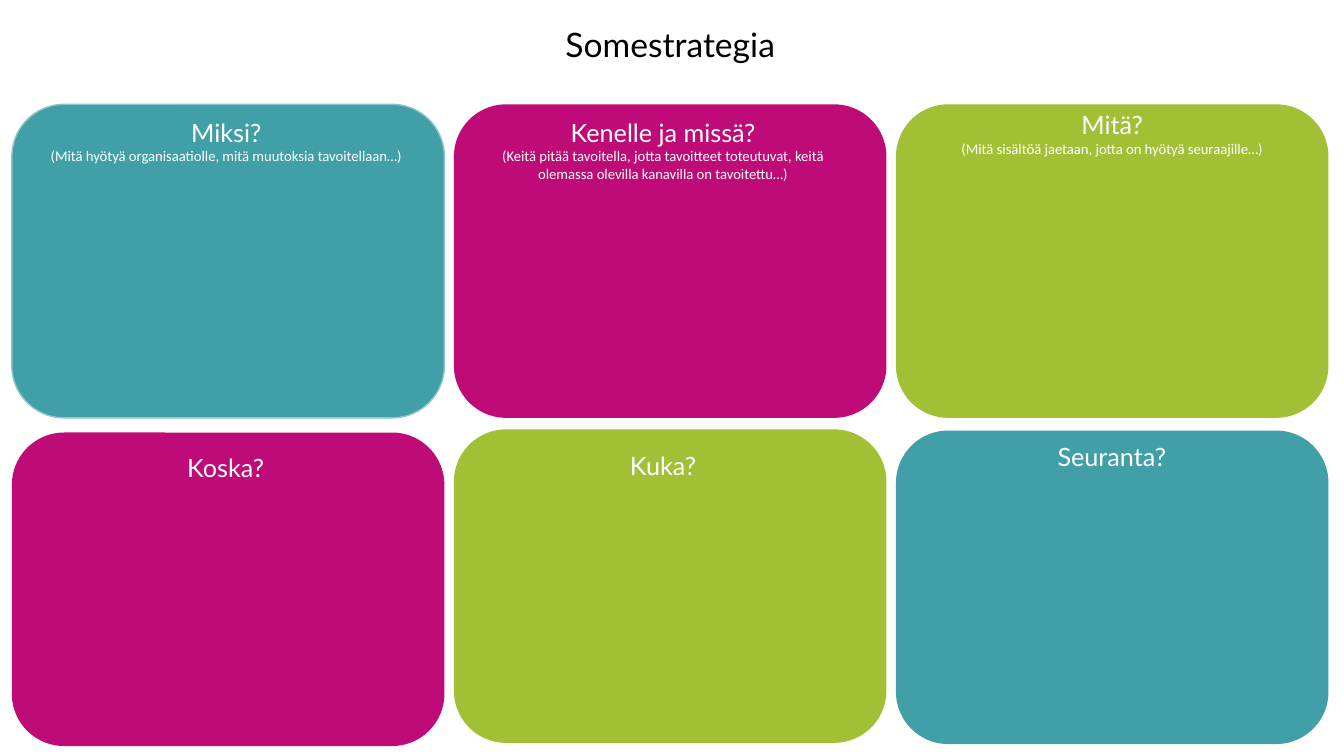
from dataclasses import dataclass

from pptx import Presentation
from pptx import util as u
from pptx.dml.color import RGBColor
from pptx.enum import shapes, text


@dataclass(frozen=True)
class Theme:
    """Colours, fonts and type sizes of the slide."""
    teal: str = "41A0A7"
    pink: str = "BE0B77"
    lime: str = "A2C036"
    edge: str = "8CC6CA"
    white: str = "FFFFFF"
    black: str = "000000"
    head: str = "Lato"
    body: str = "Calibri"
    title: float = 24
    large: float = 18
    small: float = 10.5


class Board:
    """Draws the title, cards and labels on one slide."""

    def __init__(self, slide, theme):
        self.slide = slide
        self.theme = theme

    def style(self, para, font, size, color):
        para.alignment = text.PP_ALIGN.CENTER
        para.font.name = font
        para.font.size = u.Pt(size)
        para.font.color.rgb = RGBColor.from_string(color)

    def title(self, words, left, top, width, height):
        box = self.slide.shapes.title
        box.left, box.top = u.Cm(left), u.Cm(top)
        box.width, box.height = u.Cm(width), u.Cm(height)
        frame = box.text_frame
        frame.text = words
        frame.vertical_anchor = text.MSO_ANCHOR.TOP
        frame.auto_size = text.MSO_AUTO_SIZE.NONE
        t = self.theme
        self.style(frame.paragraphs[0], t.head, t.title, t.black)

    def card(self, kind, left, top, width, height, fill, edge=None):
        card = self.slide.shapes.add_shape(
            kind, u.Cm(left), u.Cm(top), u.Cm(width), u.Cm(height))
        card.shadow.inherit = False
        card.fill.solid()
        card.fill.fore_color.rgb = RGBColor.from_string(fill)
        if edge:
            card.line.color.rgb = RGBColor.from_string(edge)
            card.line.width = u.Pt(1)
        else:
            card.line.fill.background()

    def label(self, head, hint, left, top, width, height):
        box = self.slide.shapes.add_textbox(
            u.Cm(left), u.Cm(top), u.Cm(width), u.Cm(height))
        frame = box.text_frame
        frame.word_wrap = True
        t = self.theme
        para = frame.paragraphs[0]
        para.text = head
        self.style(para, t.head, t.large, t.white)
        if hint:
            para = frame.add_paragraph()
            para.text = hint
            self.style(para, t.body, t.small, t.white)


def main():
    deck = Presentation()
    deck.slide_width, deck.slide_height = u.Cm(33.87), u.Cm(19.05)
    theme = Theme()
    board = Board(deck.slides.add_slide(deck.slide_layouts[5]), theme)
    board.title("Somestrategia", 6.78, 0.48, 20.22, 1.27)

    round_box = shapes.MSO_SHAPE.ROUNDED_RECTANGLE
    process = shapes.MSO_SHAPE.FLOWCHART_ALTERNATE_PROCESS
    left, pitch, width, height = 0.3, 11.14, 10.9, 7.9
    cards = [
        (process, 2.63, theme.teal, theme.edge),
        (round_box, 2.63, theme.pink, None),
        (round_box, 2.63, theme.lime, None),
        (round_box, 10.9, theme.pink, None),
        (round_box, 10.82, theme.lime, None),
        (round_box, 10.85, theme.teal, None),
    ]
    for i, (kind, top, fill, edge) in enumerate(cards):
        board.card(kind, left + i % 3 * pitch, top, width, height, fill, edge)

    labels = [
        ("Miksi?",
         "(Mitä hyötyä organisaatiolle, mitä muutoksia tavoitellaan…)",
         0.69, 2.82, 10.03, 1.93),
        ("Kenelle ja missä?",
         "(Keitä pitää tavoitella, jotta tavoitteet toteutuvat, "
         "keitä olemassa olevilla kanavilla on tavoitettu…)",
         11.91, 2.82, 9.6, 2.36),
        ("Mitä?",
         "(Mitä sisältöä jaetaan, jotta on hyötyä seuraajille…)",
         22.58, 2.64, 10.9, 1.9),
        ("Koska?", None, 0.91, 11.28, 9.55, 1.8),
        ("Kuka?", None, 11.73, 11.23, 9.96, 1.7),
        ("Seuranta?", None, 23.04, 11, 9.96, 2.31),
    ]
    for label in labels:
        board.label(*label)

    deck.save("out.pptx")


if __name__ == "__main__":
    main()
